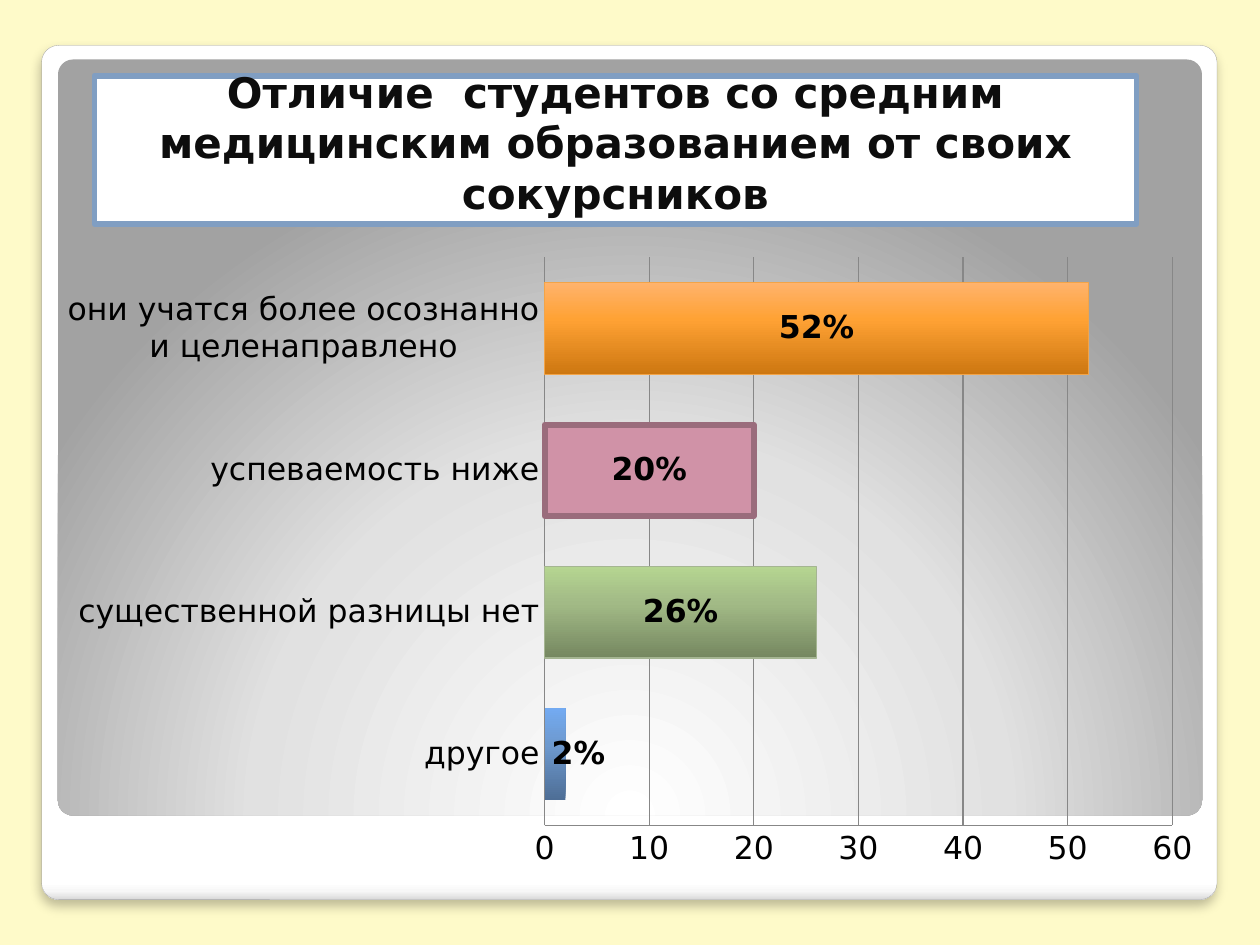
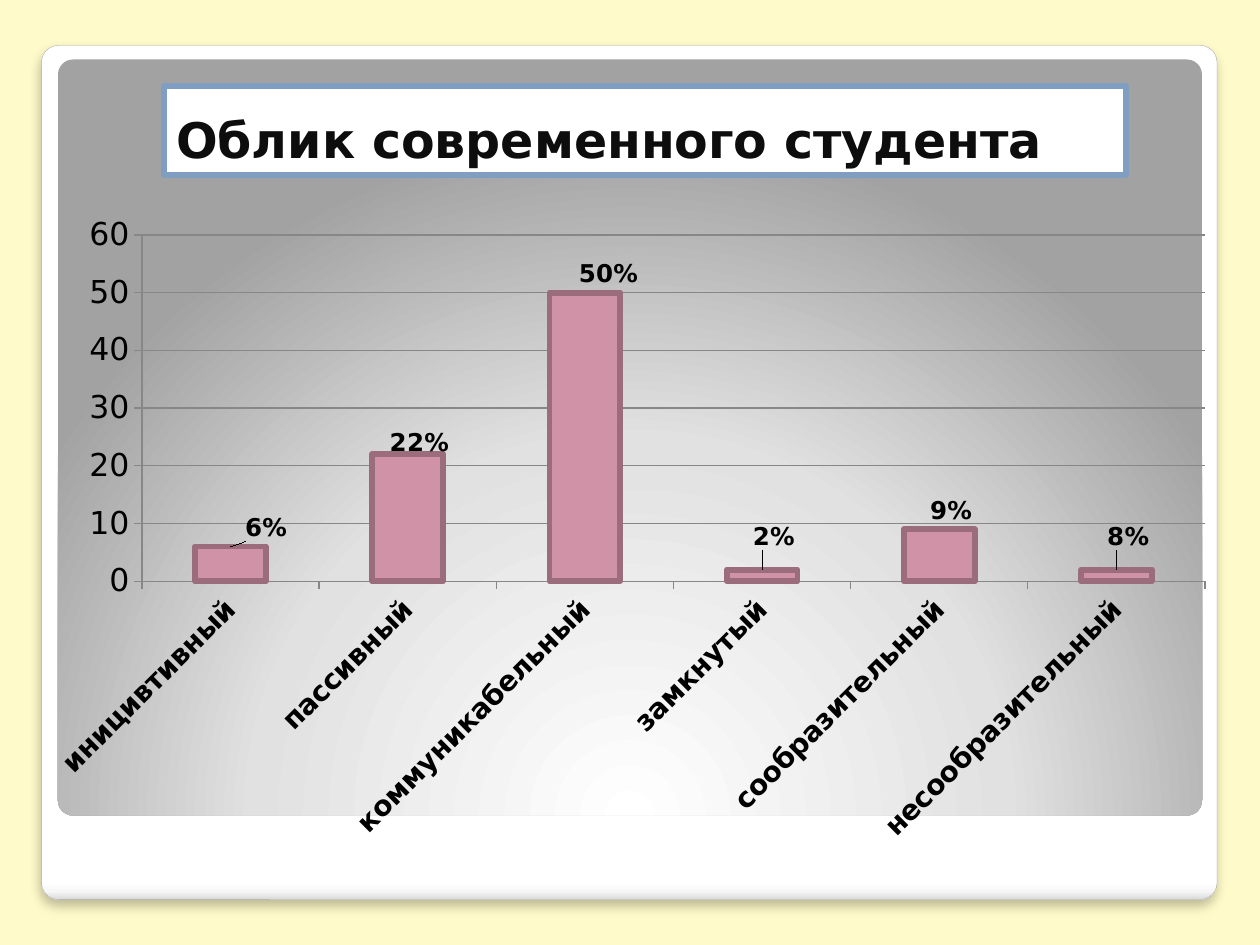
"""Builds two framed survey slides, each with a boxed title and a bar chart."""
from lxml.etree import SubElement
from pptx import Presentation
from pptx.chart.data import CategoryChartData
from pptx.dml.color import RGBColor
from pptx.enum.chart import XL_CHART_TYPE as ChartType
from pptx.enum.chart import XL_LABEL_POSITION as LabelPlace
from pptx.enum.chart import XL_TICK_MARK as Tick
from pptx.enum.shapes import MSO_SHAPE as Preset
from pptx.enum.text import MSO_ANCHOR as Anchor
from pptx.enum.text import PP_ALIGN as Align
from pptx.oxml import parse_xml
from pptx.oxml.ns import nsdecls, qn
from pptx.util import Inches, Pt

CREAM = RGBColor(0xFE, 0xFA, 0xC9)
WHITE = RGBColor(0xFF, 0xFF, 0xFF)
SNOW = RGBColor(0xF7, 0xF7, 0xF7)
SILVER = RGBColor(0xDA, 0xDA, 0xDA)
MIST = RGBColor(0xE1, 0xE1, 0xE1)
GREY = RGBColor(0xA2, 0xA2, 0xA2)
EDGE = RGBColor(0xA4, 0xA4, 0xA4)
RULE = RGBColor(0x87, 0x87, 0x87)
BLACK = RGBColor(0, 0, 0)
INK = RGBColor(0x0D, 0x0D, 0x0D)
TITLE_BLUE = RGBColor(0x80, 0x9E, 0xC2)
PINK = RGBColor(0xD0, 0x92, 0xA7)
PLUM = RGBColor(0x9A, 0x6C, 0x7C)
GREEN = RGBColor(0xA5, 0xB5, 0x92)
AMBER = RGBColor(0xF3, 0xA4, 0x47)
BLUES = [(0, RGBColor(0x4E, 0x6E, 0x96)), (60, RGBColor(0x6D, 0x99, 0xCE)),
         (100, RGBColor(0x73, 0xAA, 0xF1))]
GREENS = [(0, RGBColor(0x75, 0x87, 0x60)), (60, RGBColor(0xA2, 0xBA, 0x86)),
          (100, RGBColor(0xB5, 0xD5, 0x91))]
ORANGES = [(0, RGBColor(0xCD, 0x77, 0x11)), (60, RGBColor(0xFF, 0xA2, 0x34)),
           (100, RGBColor(0xFF, 0xB3, 0x6D))]
CARD = [(0, WHITE), (98, WHITE), (99, SNOW), (100, SILVER)]
GLOW = [(0, WHITE), (55, MIST), (100, GREY)]
DOWN = '<a:lin ang="5400000" scaled="0"/>'
UP = '<a:lin ang="16200000" scaled="0"/>'
RADIAL = '<a:path path="circle"><a:fillToRect l="50000" t="175000" r="50000" b="-75000"/></a:path>'
HEAVY = 3.35


def paint_gradient(fill, properties, stops, direction):
    fill.background()
    marks = "".join(f'<a:gs pos="{share * 1000}"><a:srgbClr val="{color}"/></a:gs>'
                    for share, color in stops)
    gradient = parse_xml(f'<a:gradFill {nsdecls("a")} rotWithShape="1">'
                         f'<a:gsLst>{marks}</a:gsLst>{direction}</a:gradFill>')
    blank = properties.find(qn("a:noFill"))
    properties.replace(blank, gradient)


def draw_line(line, color, width):
    line.color.rgb = color
    line.width = Pt(width)


def chart_layout(**settings):
    layout = parse_xml(f'<c:layout {nsdecls("c")}><c:manualLayout/></c:layout>')
    for name, value in settings.items():
        SubElement(layout[0], qn(f"c:{name}"), val=str(value))
    return layout


class SurveyDeck:
    def __init__(self, font):
        self.font = font
        self.deck = Presentation()
        self.deck.slide_width, self.deck.slide_height = Inches(10), Inches(7.5)
        self.page = None

    def area(self, left, top, width, height):
        across, down = self.deck.slide_width / 100, self.deck.slide_height / 100
        return [int(n) for n in (left * across, top * down, width * across, height * down)]

    def style(self, font, size, color=BLACK, bold=False):
        font.name, font.size, font.bold = self.font, Pt(size), bold
        font.color.rgb = color

    def add_box(self, preset, area):
        box = self.page.shapes.add_shape(preset, *self.area(*area))
        box.shadow.inherit = False
        box.line.fill.background()
        return box

    def add_panel(self, area, stops, direction):
        panel = self.add_box(Preset.ROUNDED_RECTANGLE, area)
        panel.adjustments[0] = 0.02
        paint_gradient(panel.fill, panel.element.spPr, stops, direction)
        return panel

    def add_page(self):
        self.page = self.deck.slides.add_slide(self.deck.slide_layouts[6])
        self.page.background.fill.solid()
        self.page.background.fill.fore_color.rgb = CREAM
        card = self.add_panel((3.3, 4.8, 93.3, 90.4), CARD, DOWN)
        draw_line(card.line, EDGE, 0.16)
        effects = card.element.spPr.find(qn("a:effectLst"))
        effects.append(parse_xml(
            f'<a:outerShdw {nsdecls("a")} blurRad="{Pt(6)}" dist="{Pt(4)}" dir="5400000" '
            'algn="t" rotWithShape="0"><a:srgbClr val="000000">'
            '<a:alpha val="25000"/></a:srgbClr></a:outerShdw>'))
        self.add_panel((4.6, 6.3, 90.8, 80), GLOW, RADIAL)

    def add_title(self, text, area, size, align):
        box = self.add_box(Preset.RECTANGLE, area)
        box.fill.solid()
        box.fill.fore_color.rgb = WHITE
        draw_line(box.line, TITLE_BLUE, HEAVY)
        frame = box.text_frame
        frame.word_wrap, frame.vertical_anchor = True, Anchor.BOTTOM
        para = frame.paragraphs[0]
        para.text, para.alignment = text, align
        self.style(para.font, size, INK, True)

    def add_chart(self, kind, area, categories, values, gap, tick):
        data = CategoryChartData()
        data.categories = categories
        data.add_series("Series 1", values)
        chart = self.page.shapes.add_chart(kind, *self.area(*area), data).chart
        chart.has_legend = chart.has_title = False
        self.style(chart.font, 18)
        plot = chart.plots[0]
        plot.gap_width, plot.vary_by_categories = gap, False
        for axis in (chart.category_axis, chart.value_axis):
            axis.major_tick_mark, axis.minor_tick_mark = tick, Tick.NONE
            draw_line(axis.format.line, RULE, 0.75)
        scale = chart.value_axis
        scale.minimum_scale, scale.maximum_scale, scale.major_unit = 0, 60, 10
        scale.has_major_gridlines = True
        draw_line(scale.major_gridlines.format.line, RULE, 0.75)
        plot.series[0].invert_if_negative = False
        return chart

    def color_bars(self, part, color, edge=None, width=HEAVY):
        part.format.fill.solid()
        part.format.fill.fore_color.rgb = color
        if edge:
            draw_line(part.format.line, edge, width)

    def shade_bar(self, point, stops, edge=None):
        look = point.format
        paint_gradient(look.fill, look._element.get_or_add_spPr(), stops, UP)
        if edge:
            draw_line(look.line, edge, 0.75)

    def label_bars(self, series, texts, size, place, shifts):
        for index, text in enumerate(texts):
            label = series.points[index].data_label
            span = label.text_frame.paragraphs[0].add_run()
            span.text = text
            self.style(span.font, size, bold=True)
            label.position = place
            if index in shifts:
                x, y = shifts[index]
                label._dLbl.insert(1, chart_layout(x=x, y=y))


def build_difference(survey):
    survey.add_page()
    survey.add_title("Отличие  студентов со средним медицинским образованием от своих сокурсников",
                     (7.5, 8, 82.7, 15.7), 24, Align.CENTER)
    chart = survey.add_chart(
        ChartType.BAR_STACKED, (3.5, 25.9, 93, 67.2),
        ["другое", "существенной разницы нет", "успеваемость ниже",
         "они учатся более осознанно и целенаправлено"],
        [2, 26, 20, 52], 55, Tick.NONE)
    chart.plots[0].overlap = 100
    series = chart.plots[0].series[0]
    survey.color_bars(series, GREEN)
    other, same, lower, aware = (series.points[index] for index in range(4))
    survey.shade_bar(other, BLUES)
    survey.shade_bar(same, GREENS, GREEN)
    survey.color_bars(lower, PINK, PLUM)
    survey.shade_bar(aware, ORANGES, AMBER)
    survey.label_bars(series, ["2%", "26%", "20%", "52%"], 18, LabelPlace.CENTER, {0: (0.02, 0)})


def build_portrait(survey):
    survey.add_page()
    survey.add_title("Облик современного студента", (13, 9.1, 76.4, 9.4), 28, Align.LEFT)
    chart = survey.add_chart(
        ChartType.COLUMN_CLUSTERED, (2, 22.7, 94.5, 74.5),
        ["иницивтивный", "пассивный", "коммуникабельный", "замкнутый",
         "сообразительный", "несообразительный"],
        [6, 22, 50, 2, 9, 2], 150, Tick.OUTSIDE)
    names = chart.category_axis.tick_labels
    survey.style(names.font, 16, bold=True)
    chart.category_axis._element.find(qn("c:txPr")).find(qn("a:bodyPr")).set("rot", "-2700000")
    area = chart._chartSpace.chart.plotArea
    for layout in area.findall(qn("c:layout")):
        area.remove(layout)
    area.insert(0, chart_layout(layoutTarget="inner", xMode="edge", yMode="edge",
                                x=0.098, y=0.029, w=0.893, h=0.492))
    series = chart.plots[0].series[0]
    survey.color_bars(series, PINK, PLUM)
    shifts = [(0.03, 0), (0.01, 0.01), (0.02, 0), (0.01, -0.02), (0.01, 0), (0.01, -0.02)]
    survey.label_bars(series, ["6%", "22%", "50%", "2%", "9%", "8%"], 14,
                      LabelPlace.OUTSIDE_END, dict(enumerate(shifts)))


def main():
    survey = SurveyDeck("DejaVu Sans")
    build_difference(survey)
    build_portrait(survey)
    survey.deck.save("out.pptx")


if __name__ == "__main__":
    main()
